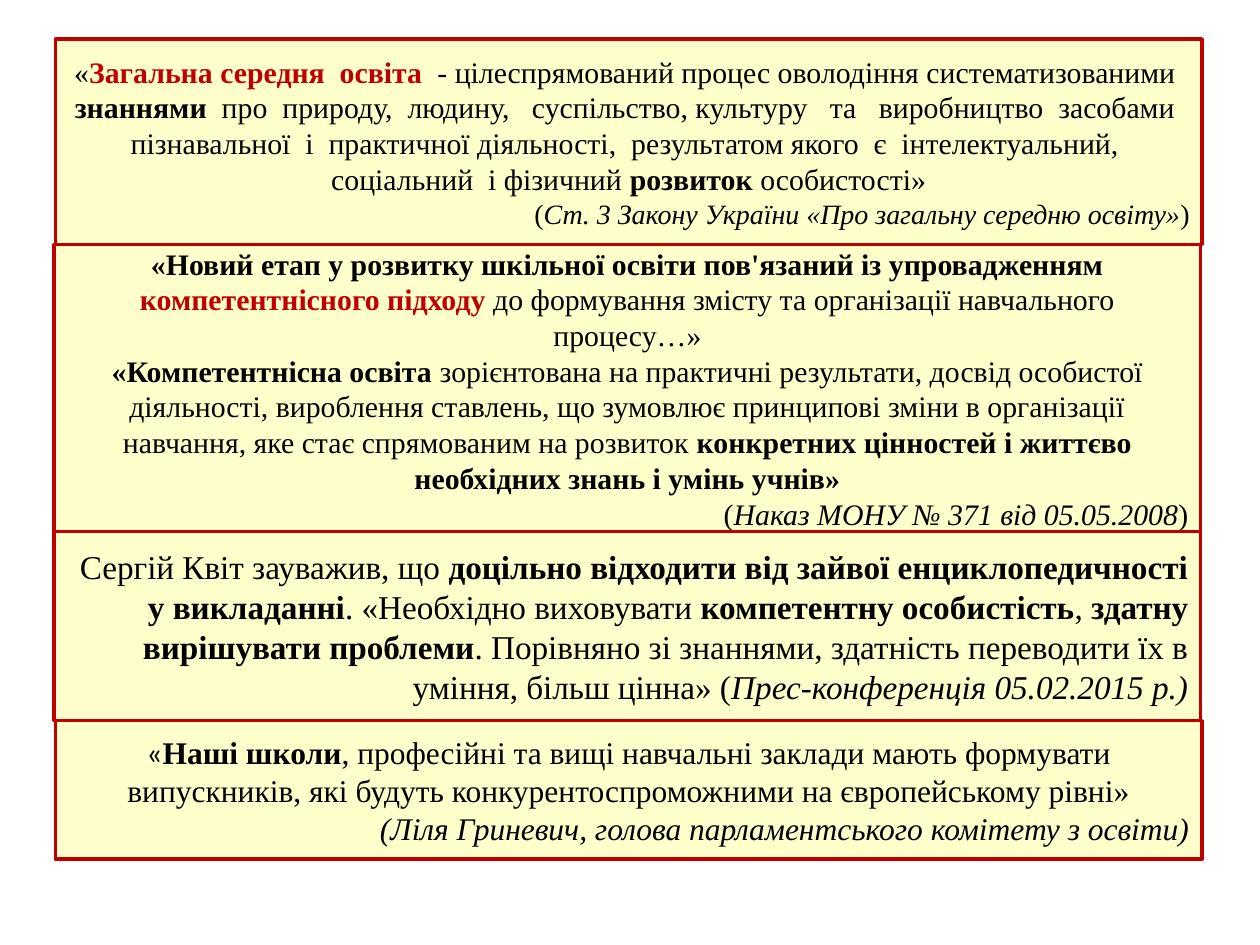
"""Build a slide of four stacked quotations on competence-based education."""
from dataclasses import dataclass

from pptx import Presentation
from pptx.dml.color import RGBColor
from pptx.enum.shapes import MSO_SHAPE as Shape
from pptx.enum.text import MSO_ANCHOR as Anchor, PP_ALIGN as Align
from pptx.util import Inches, Pt

COLORS = {"panel": "FFFFCC", "accent": "C00000", "text": "000000"}
SERIF = "Times New Roman"
BOLD = {"bold": True}
ITALIC = {"italic": True}


@dataclass(frozen=True)
class Span:
    text: str
    style: dict
    color: str = "text"


@dataclass(frozen=True)
class Para:
    align: Align
    size: float
    spans: tuple[Span, ...]


@dataclass(frozen=True)
class Quote:
    left: float
    height: float
    paras: tuple[Para, ...]


def plain(text: str) -> Span:
    return Span(text, {})


def bold(text: str, color: str = "text") -> Span:
    return Span(text, BOLD, color)


def italic(text: str) -> Span:
    return Span(text, ITALIC)


def centered(size: float, *spans: Span) -> Para:
    return Para(Align.CENTER, size, spans)


def right(size: float, *spans: Span) -> Para:
    return Para(Align.RIGHT, size, spans)


TOP = 0.31
WIDTH = 9.1
QUOTES = (
    Quote(0.44, 1.63, (
        centered(
            17,
            plain("«"),
            bold("Загальна середня  освіта", "accent"),
            plain("  - цілеспрямований процес оволодіння систематизованими  "),
            bold("знаннями"),
            plain("  про  природу,  людину,   суспільство, культуру   та   виробництво  "
                  "засобами  пізнавальної  і  практичної діяльності,  результатом якого  "
                  "є  інтелектуальний,  соціальний  і фізичний "),
            bold("розвиток"),
            plain(" особистості»"),
        ),
        right(
            16,
            plain("("),
            italic("Ст. 3 Закону України «Про загальну середню освіту»"),
            plain(")"),
        ),
    )),
    Quote(0.43, 2.28, (
        centered(
            17,
            bold("«Новий етап у розвитку шкільної освіти пов'язаний із упровадженням "),
            bold("компетентнісного підходу ", "accent"),
            plain("до формування змісту та організації навчального процесу…»"),
        ),
        centered(
            17,
            bold("«Компетентнісна освіта"),
            plain(" зорієнтована на практичні результати, досвід особистої діяльності, "
                  "вироблення ставлень, що зумовлює принципові зміни в організації "
                  "навчання, яке стає спрямованим на розвиток "),
            bold("конкретних цінностей і життєво необхідних знань і умінь учнів»"),
        ),
        right(17, plain("("), italic("Наказ МОНУ № 371 від 05.05.2008"), plain(")")),
    )),
    Quote(0.43, 1.5, (
        right(
            19,
            plain("Сергій Квіт зауважив, що "),
            bold("доцільно відходити від зайвої енциклопедичності у викладанні"),
            plain(". «Необхідно виховувати "),
            bold("компетентну особистість"),
            plain(", "),
            bold("здатну вирішувати проблеми"),
            plain(". Порівняно зі знаннями, здатність переводити їх в уміння, "
                  "більш цінна» ("),
            italic("Прес-конференція 05.02.2015 р.)"),
        ),
    )),
    Quote(0.44, 1.1, (
        centered(
            18,
            Span("«", {"name": "Calibri"}),
            bold("Наші школи"),
            plain(", професійні та вищі навчальні заклади мають формувати випускників, "
                  "які будуть конкурентоспроможними на європейському рівні»"),
        ),
        right(18, italic("(Ліля Гриневич, голова парламентського комітету з освіти)")),
    )),
)


def rgb(name: str) -> RGBColor:
    return RGBColor.from_string(COLORS[name])


def write_para(target, para: Para) -> None:
    target.alignment = para.align
    for span in para.spans:
        run = target.add_run()
        run.text = span.text
        style = {"name": SERIF, "size": Pt(para.size), "bold": False,
                 "italic": False, **span.style}
        for attribute, value in style.items():
            setattr(run.font, attribute, value)
        run.font.color.rgb = rgb(span.color)


def draw_quote(page, quote: Quote, top: float) -> None:
    box = page.shapes.add_shape(Shape.RECTANGLE, Inches(quote.left), Inches(top),
                                Inches(WIDTH), Inches(quote.height))
    box.shadow.inherit = False
    box.fill.solid()
    box.fill.fore_color.rgb = rgb("panel")
    box.line.color.rgb = rgb("accent")
    box.line.width = Pt(2)
    frame = box.text_frame
    for attribute, value in {"word_wrap": True, "vertical_anchor": Anchor.MIDDLE}.items():
        setattr(frame, attribute, value)
    for index, para in enumerate(quote.paras):
        write_para(frame.add_paragraph() if index else frame.paragraphs[0], para)


def main() -> None:
    deck = Presentation()
    deck.slide_width, deck.slide_height = Inches(10), Inches(7.5)
    page = deck.slides.add_slide(deck.slide_layouts[6])
    top = TOP
    for quote in QUOTES:
        draw_quote(page, quote, top)
        top += quote.height
    deck.save("out.pptx")


if __name__ == "__main__":
    main()
